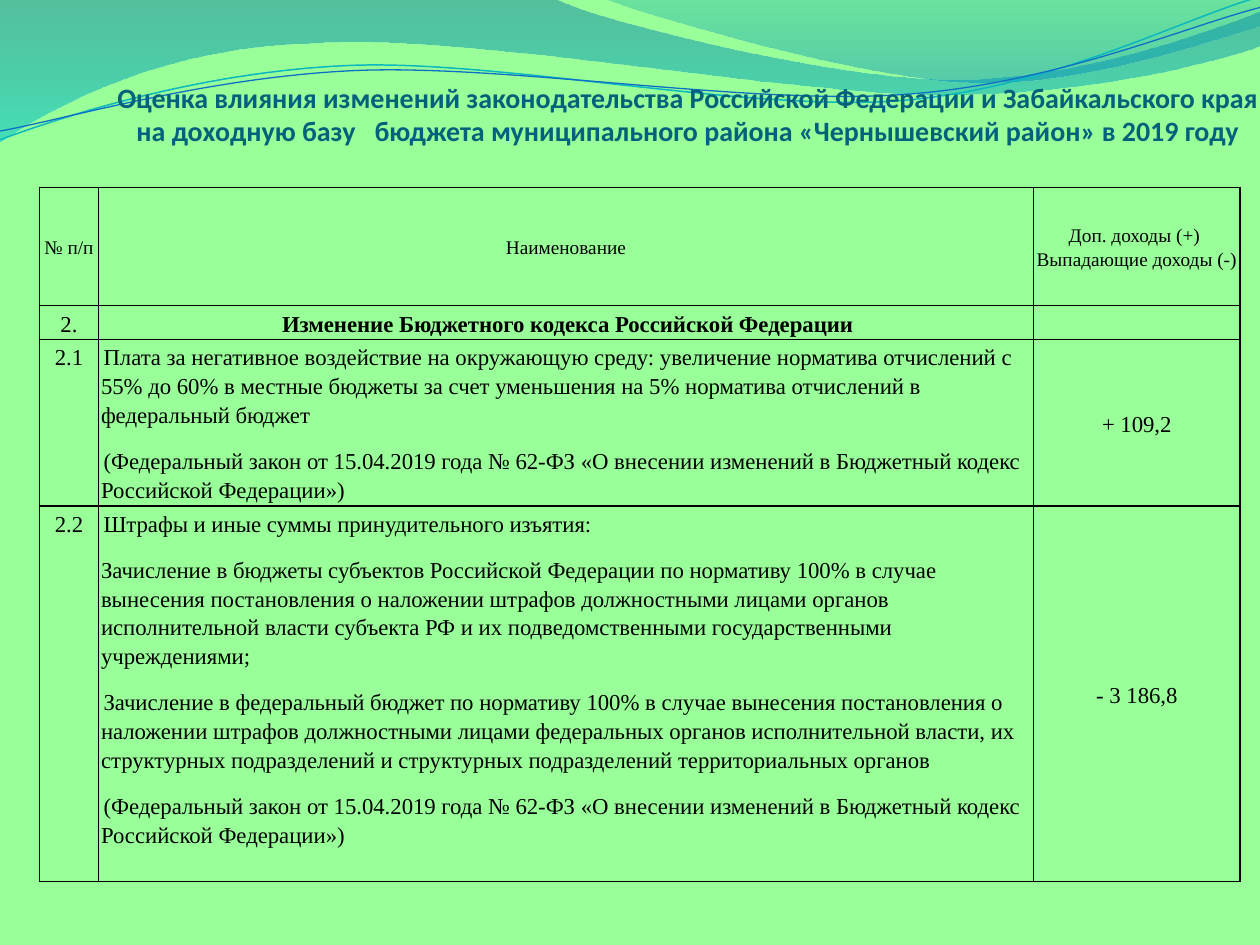
import math
from dataclasses import dataclass

import pptx
import pptx.dml.color
import pptx.enum.text
import pptx.oxml
import pptx.oxml.ns
import pptx.util

Inches, Pt = pptx.util.Inches, pptx.util.Pt
ALIGN, ANCHOR = pptx.enum.text.PP_ALIGN, pptx.enum.text.MSO_ANCHOR
SLIDE_W, SLIDE_H = 10, 7.5
qn, NAMESPACE = pptx.oxml.ns.qn, pptx.oxml.ns.nsdecls("a")


@dataclass(frozen=True)
class Theme:
    background: str = "99FF99"
    title: str = "04617B"
    ink: str = "000000"
    title_font: str = "Calibri"
    table_font: str = "Times New Roman"
    title_size: int = 16
    header_size: int = 11
    body_size: int = 13
    border: int = 1
    padding: float = 0.02


THEME = Theme()


@dataclass(frozen=True)
class Wave:
    """Points in inches: a pair is a corner, six numbers are a Bezier curve."""
    points: tuple
    gradient: tuple = ()  # pairs of colour and opacity
    line: str = ""
    width: float = 0
    tilt: float = 0


@dataclass(frozen=True)
class Entry:
    paragraphs: tuple = ()
    size: int = THEME.body_size
    bold: bool = False
    centered: bool = True
    middle: bool = False
    indented: tuple = ()
    after: int = 0


WAVES = (
    Wave(((0, 0), (4.4, -0.01), (4.76, 0.17, 6.64, 0.63, 7.58, 0.63),
          (8.53, 0.63, 9.58, 0.26, 10, 0.09), (10.01, 0.36),
          (9.83, 0.44, 8.7, 0.76, 7.46, 0.75), (6.22, 0.75, 3.82, 0.28, 2.57, 0.34),
          (1.29, 0.36, 0.46, 0.83, -0.01, 1.13)),
         gradient=(("0074A1", 45), ("00C6CF", 55))),
    Wave(((4.79, -0.01), (5.09, 0.11, 6.82, 0.62, 7.69, 0.65),
          (8.56, 0.69, 9.61, 0.32, 10, 0.21), (10, 0)),
         gradient=(("00A1A9", 30), ("008BBF", 45))),
    Wave(((0, 1.11), (0.48, 0.93, 1.58, 0.57, 2.77, 0.52),
          (3.95, 0.47, 5.93, 0.89, 7.13, 0.8), (8.33, 0.71, 9.38, 0.15, 9.98, -0.02)),
         line="0AB8BF", width=0.85, tilt=-2.7),
    Wave(((0, 1.04), (0.47, 0.96, 1.64, 0.61, 2.83, 0.56),
          (4.03, 0.51, 5.97, 0.84, 7.17, 0.75), (8.36, 0.67, 9.41, 0.21, 10, 0.06)),
         line="0F6FC6", width=0.75, tilt=-2.7),
)

TITLE = ("Оценка влияния изменений законодательства Российской Федерации и Забайкальского края "
         "на доходную базу   бюджета муниципального района «Чернышевский район» в 2019 году")
LAW = ("(Федеральный закон от 15.04.2019 года № 62-ФЗ «О внесении изменений "
       "в Бюджетный кодекс Российской Федерации»)")
POLLUTION_FEE = (
    "Плата за негативное воздействие на окружающую среду: увеличение норматива отчислений с 55% "
    "до 60% в местные бюджеты за счет уменьшения на 5% норматива отчислений в федеральный бюджет",
    LAW)
FINES = (
    "Штрафы и иные суммы принудительного изъятия:",
    "Зачисление в бюджеты субъектов Российской Федерации по нормативу 100% в случае вынесения "
    "постановления о наложении штрафов должностными лицами органов исполнительной власти "
    "субъекта РФ и их подведомственными государственными учреждениями;",
    "Зачисление в федеральный бюджет по нормативу 100% в случае вынесения постановления о "
    "наложении штрафов должностными лицами федеральных органов исполнительной власти, их "
    "структурных подразделений и структурных подразделений территориальных органов",
    LAW)


def header(*lines: str) -> Entry:
    return Entry(lines, size=THEME.header_size, middle=True)


def description(lines: tuple, indented: tuple) -> Entry:
    return Entry(lines, centered=False, indented=indented, after=10)


COLUMNS = (0.47, 7.42, 1.64)
ROWS = (0.94, 0.27, 1.32, 2.98)
ENTRIES = (
    (header("№ п/п"), header("Наименование"),
     header("Доп. доходы (+) ", "Выпадающие доходы (-)")),
    (Entry(("2.",), after=10),
     Entry(("Изменение Бюджетного кодекса Российской Федерации",), bold=True,
           indented=(0,), after=10), Entry()),
    (Entry(("2.1",)), description(POLLUTION_FEE, (0, 1)), Entry(("+ 109,2",), middle=True)),
    (Entry(("2.2",)), description(FINES, (0, 2, 3)), Entry(("- 3 186,8",), middle=True)),
)


def rgb(color: str) -> pptx.dml.color.RGBColor:
    return pptx.dml.color.RGBColor.from_string(color)


def apply(target, formats: dict) -> None:
    for name, value in formats.items():
        setattr(target, name, value)


def style_font(font, name: str, size: int, color: str, bold: bool) -> None:
    apply(font, {"name": name, "size": Pt(size), "bold": bold})
    font.color.rgb = rgb(color)


def rotate(x: float, y: float, degrees: float) -> tuple:
    c, s = math.cos(math.radians(degrees)), math.sin(math.radians(degrees))
    return x * c - y * s, x * s + y * c


def draw_wave(slide, wave: Wave) -> None:
    knots = [rotate(Inches(p[i]), Inches(p[i + 1]), -wave.tilt)
             for p in wave.points for i in range(0, len(p), 2)]
    builder = slide.shapes.build_freeform(*knots[0])
    builder.add_line_segments(knots[1:], close=bool(wave.gradient))
    ribbon = builder.convert_to_shape()
    ribbon.shadow.inherit = False
    # Each run of three control points becomes one curve
    segments = iter(list(ribbon._element.iter(qn("a:lnTo"))))
    for point in wave.points[1:]:
        first = next(segments)
        if len(point) == 6:
            curve = pptx.oxml.parse_xml(f"<a:cubicBezTo {NAMESPACE}/>")
            first.addprevious(curve)
            for segment in (first, next(segments), next(segments)):
                curve.append(segment[0])
                segment.getparent().remove(segment)
    if wave.line:
        x, y = rotate(ribbon.left + ribbon.width / 2, ribbon.top + ribbon.height / 2, wave.tilt)
        apply(ribbon, {"left": round(x - ribbon.width / 2), "top": round(y - ribbon.height / 2),
                       "rotation": wave.tilt})
        ribbon.fill.background()
        ribbon.line.color.rgb = rgb(wave.line)
        ribbon.line.width = Pt(wave.width)
        return
    ribbon.line.fill.background()
    ribbon.fill.gradient()
    ribbon.fill.gradient_angle = 270
    for position, (stop, (color, opacity)) in enumerate(
            zip(ribbon.fill.gradient_stops, wave.gradient)):
        stop.position = position
        stop.color.rgb = rgb(color)
        stop._gs[0].append(pptx.oxml.parse_xml(f'<a:alpha {NAMESPACE} val="{opacity * 1000}"/>'))


def draw_title(slide) -> None:
    heading = slide.shapes.title
    apply(heading, {"left": Inches(0.92), "top": Inches(0.47),
                    "width": Inches(SLIDE_W - 0.92), "height": Inches(0.7)})
    frame = heading.text_frame
    apply(frame, {"margin_left": 0, "margin_right": 0, "margin_top": Inches(0.05),
                  "margin_bottom": 0, "word_wrap": True, "vertical_anchor": ANCHOR.BOTTOM,
                  "auto_size": pptx.enum.text.MSO_AUTO_SIZE.NONE})
    frame.text = TITLE
    line = frame.paragraphs[0]
    line.alignment = ALIGN.CENTER
    style_font(line.runs[0].font, THEME.title_font, THEME.title_size, THEME.title, True)
    slide.shapes._spTree.append(heading._element)  # in front of the waves


def fill_cell(cell, entry: Entry) -> None:
    padding = Inches(THEME.padding)
    apply(cell, {f"margin_{side}": padding for side in ("left", "right", "top", "bottom")})
    cell.vertical_anchor = ANCHOR.MIDDLE if entry.middle else ANCHOR.TOP
    frame = cell.text_frame
    for index, words in enumerate(entry.paragraphs):
        paragraph = frame.add_paragraph() if index else frame.paragraphs[0]
        apply(paragraph, {"alignment": ALIGN.CENTER if entry.centered else ALIGN.LEFT,
                          "line_spacing": 1.15, "space_after": Pt(entry.after)})
        if index in entry.indented:
            paragraph._p.get_or_add_pPr().set("indent", str(padding))
        run = paragraph.add_run()
        run.text = words
        style_font(run.font, THEME.table_font, entry.size, THEME.ink, entry.bold)
    if not entry.paragraphs:  # keeps the empty cell from stretching its row
        frame.paragraphs[0]._p.append(pptx.oxml.parse_xml(
            f'<a:endParaRPr {NAMESPACE} sz="{entry.size * 100}"/>'))
    for edge in ("lnL", "lnR", "lnT", "lnB"):
        cell._tc.get_or_add_tcPr().append(pptx.oxml.parse_xml(
            f'<a:{edge} {NAMESPACE} w="{Pt(THEME.border)}"><a:solidFill>'
            f'<a:srgbClr val="{THEME.ink}"/></a:solidFill></a:{edge}>'))
    cell.fill.background()


def draw_table(slide) -> None:
    budget = slide.shapes.add_table(len(ROWS), len(COLUMNS), Pt(22.5), Pt(107),
                                    Inches(sum(COLUMNS)), Inches(sum(ROWS))).table
    apply(budget, {"first_row": False, "horz_banding": False})
    for column, width in zip(budget.columns, COLUMNS):
        column.width = Inches(width)
    for row, height, entries in zip(budget.rows, ROWS, ENTRIES):
        row.height = Inches(height)
        for cell, entry in zip(row.cells, entries):
            fill_cell(cell, entry)


deck = pptx.Presentation()
apply(deck, {"slide_width": Inches(SLIDE_W), "slide_height": Inches(SLIDE_H)})
budget_slide = deck.slides.add_slide(deck.slide_layouts[5])
budget_slide.background.fill.solid()
budget_slide.background.fill.fore_color.rgb = rgb(THEME.background)
for ribbon_wave in WAVES:
    draw_wave(budget_slide, ribbon_wave)
draw_title(budget_slide)
draw_table(budget_slide)
deck.save("out.pptx")
